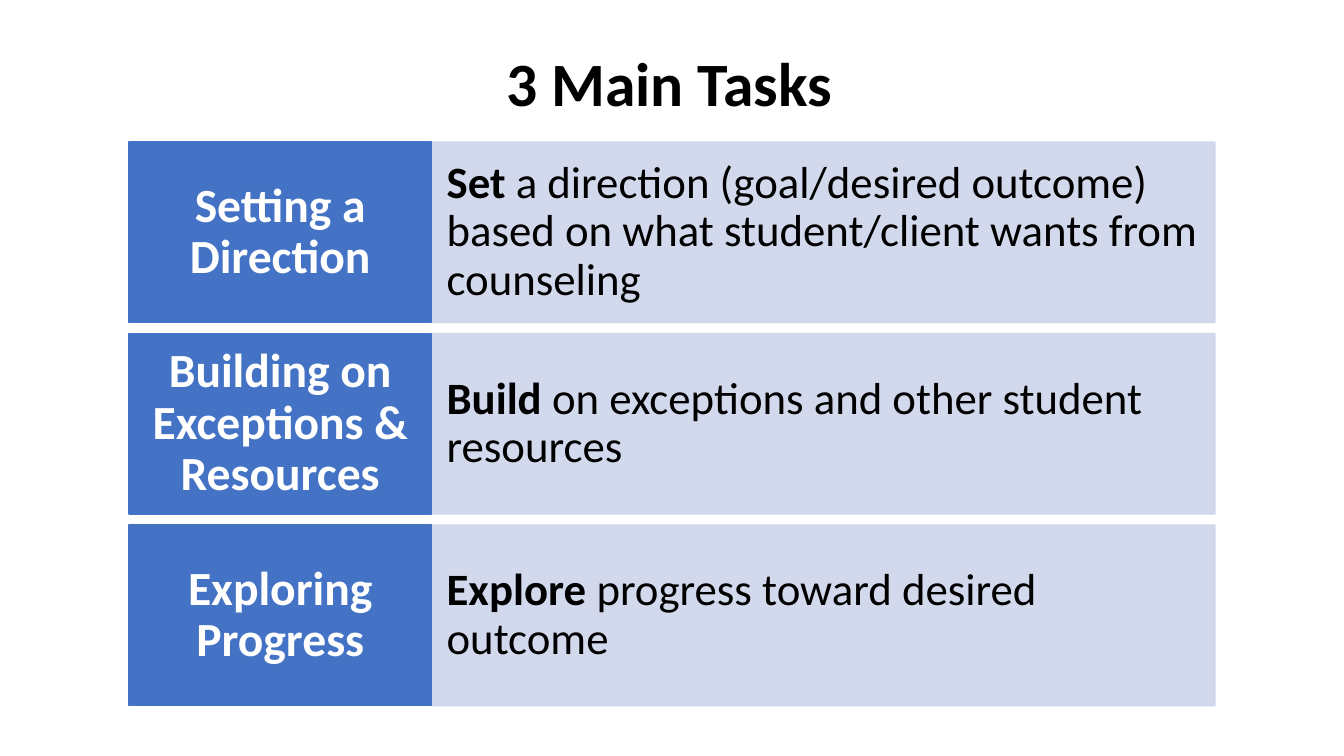
import dataclasses

import lxml.etree
import pptx
import pptx.dml.color
import pptx.enum.shapes
import pptx.enum.text
import pptx.oxml.ns
import pptx.util

EMU_PER_PX = 9144
CENTER = pptx.enum.text.PP_ALIGN.CENTER
LEFT = pptx.enum.text.PP_ALIGN.LEFT


@dataclasses.dataclass(frozen=True)
class Theme:
    font: str = "Calibri"
    ink: str = "000000"
    label_ink: str = "FFFFFF"
    label_fill: str = "4472C4"
    detail_fill: str = "CFD5EA"
    title_size: int = 44
    label_size: int = 34
    detail_size: int = 32
    detail_opacity: int = 90
    line_spacing: float = 0.9


def px(length):
    return pptx.util.Emu(length * EMU_PER_PX)


def rgb(color):
    return pptx.dml.color.RGBColor.from_string(color)


class TaskSlide:
    def __init__(self, slide, theme):
        self.slide = slide
        self.theme = theme

    def put_text(self, shape, runs, size, color, align, side, edge):
        frame = shape.text_frame
        frame.word_wrap = True
        frame.vertical_anchor = pptx.enum.text.MSO_ANCHOR.MIDDLE
        frame.margin_left = frame.margin_right = px(side)
        frame.margin_top = frame.margin_bottom = px(edge)
        paragraph = frame.paragraphs[0]
        paragraph.alignment = align
        paragraph.line_spacing = self.theme.line_spacing
        paragraph.font.name = self.theme.font
        paragraph.font.size = pptx.util.Pt(size)
        paragraph.font.color.rgb = rgb(color)
        for words, bold in runs:
            run = paragraph.add_run()
            run.text = words
            run.font.bold = bold

    def title(self, box, words):
        heading = self.slide.shapes.add_textbox(*map(px, box))
        self.put_text(heading, [(words, True)], self.theme.title_size,
                      self.theme.ink, CENTER, 10, 5)

    def panel(self, box, color, opacity=100):
        panel = self.slide.shapes.add_shape(
            pptx.enum.shapes.MSO_SHAPE.RECTANGLE, *map(px, box))
        panel.shadow.inherit = False
        panel.fill.solid()
        panel.fill.fore_color.rgb = rgb(color)
        panel.line.color.rgb = rgb(color)
        panel.line.width = pptx.util.Pt(1)
        if opacity < 100:
            for paint in panel.element.iter(pptx.oxml.ns.qn("a:srgbClr")):
                alpha = lxml.etree.SubElement(paint, pptx.oxml.ns.qn("a:alpha"))
                alpha.set("val", str(opacity * 1000))
        return panel

    def detail(self, box, verb, rest):
        panel = self.panel(box, self.theme.detail_fill, self.theme.detail_opacity)
        self.put_text(panel, [(verb, True), (rest, False)], self.theme.detail_size,
                      self.theme.ink, LEFT, 15, 45)

    def label(self, box, words):
        panel = self.panel(box, self.theme.label_fill)
        self.put_text(panel, [(words, True)], self.theme.label_size,
                      self.theme.label_ink, CENTER, 10, 18)


TASKS = [
    ("Setting a Direction", "Set",
     " a direction (goal/desired outcome) based on what student/client wants from counseling"),
    ("Building on Exceptions & Resources", "Build",
     " on exceptions and other student resources"),
    ("Exploring Progress", "Explore", " progress toward desired outcome"),
]
LEFT_EDGE, FIRST_TOP = 128, 141
LABEL_WIDTH, DETAIL_WIDTH = 300, 777
ROW_HEIGHT, ROW_PITCH = 179, 190


def main():
    deck = pptx.Presentation()
    deck.slide_width = px(1333)
    deck.slide_height = px(750)
    tasks = TaskSlide(deck.slides.add_slide(deck.slide_layouts[6]), Theme())
    tasks.title((LEFT_EDGE, 31, 1072, 110), "3 Main Tasks")
    for row, (name, verb, rest) in enumerate(TASKS):
        top = FIRST_TOP + row * ROW_PITCH
        tasks.detail((LEFT_EDGE + LABEL_WIDTH, top, DETAIL_WIDTH, ROW_HEIGHT), verb, rest)
        tasks.label((LEFT_EDGE, top, LABEL_WIDTH, ROW_HEIGHT), name)
    deck.save("out.pptx")


if __name__ == "__main__":
    main()
